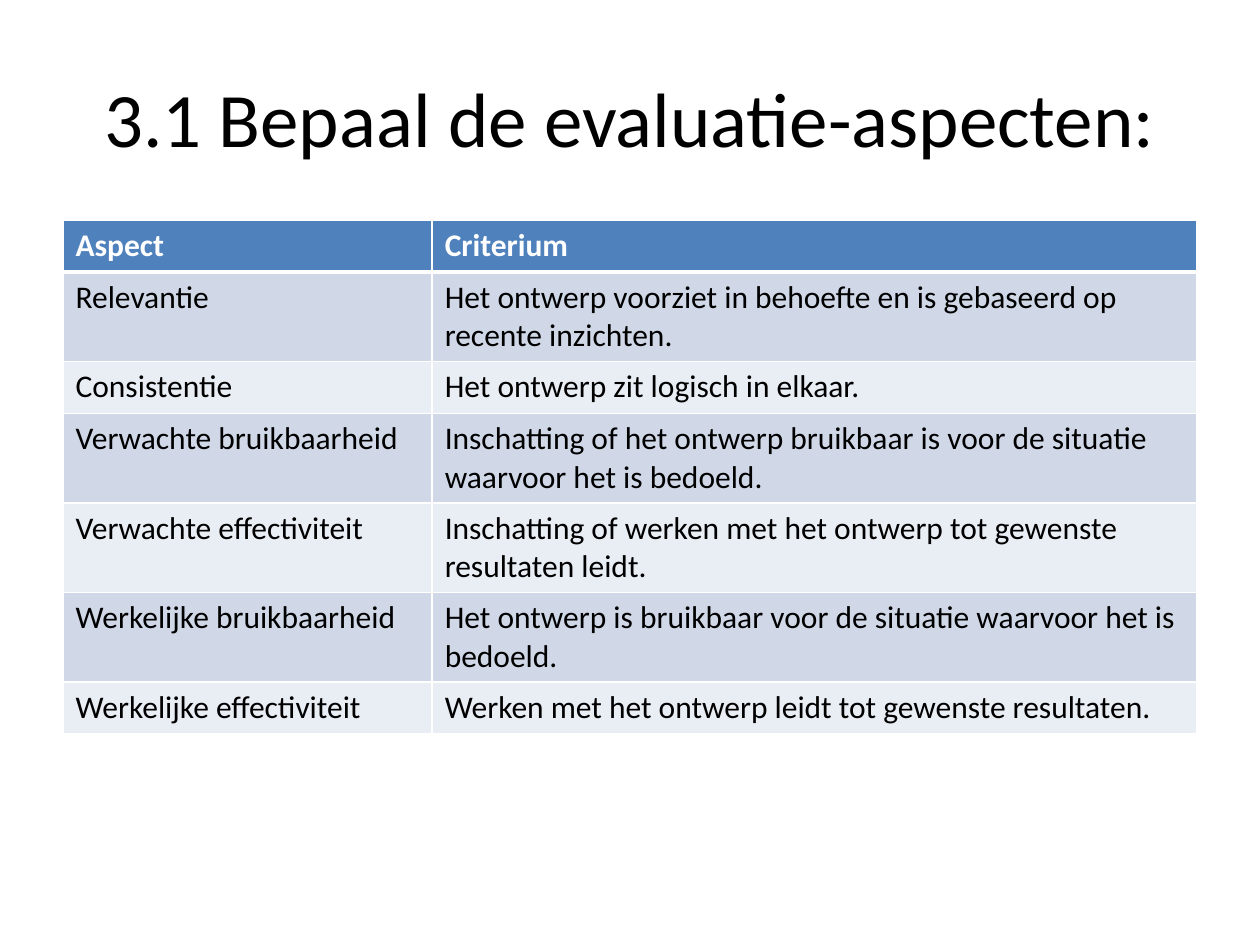
from typing import NamedTuple

from lxml import etree
from pptx import Presentation
from pptx.dml.color import RGBColor
from pptx.enum.text import MSO_ANCHOR, PP_ALIGN
from pptx.oxml.ns import qn
from pptx.util import Inches, Pt

MIDDLE = MSO_ANCHOR.MIDDLE
CENTER = PP_ALIGN.CENTER

COLORS = {
    "text": "000000",
    "white": "FFFFFF",
    "header": "4F81BD",
    "odd": "D0D8E8",
    "even": "E9EDF4",
}
FONT = "Calibri"
TITLE_ONLY = 5
WIDTH, HEIGHT = Inches(10), Inches(7.5)
MARGIN = 0.05
TITLE_TOP, TITLE_HEIGHT = 0.04, 1 / 6
TABLE_TOP = 1.75 / 7.5
COLUMN_SHARES = (0.293, 0.607)
ROW_HEIGHT = Inches(0.41)


class Criterion(NamedTuple):
    aspect: str
    criterium: str


ROWS = [
    Criterion("Aspect", "Criterium"),
    Criterion("Relevantie", "Het ontwerp voorziet in behoefte en is gebaseerd op recente inzichten."),
    Criterion("Consistentie", "Het ontwerp zit logisch in elkaar."),
    Criterion("Verwachte bruikbaarheid", "Inschatting of het ontwerp bruikbaar is voor de situatie waarvoor het is bedoeld."),
    Criterion("Verwachte effectiviteit", "Inschatting of werken met het ontwerp tot gewenste resultaten leidt."),
    Criterion("Werkelijke bruikbaarheid", "Het ontwerp is bruikbaar voor de situatie waarvoor het is bedoeld."),
    Criterion("Werkelijke effectiviteit", "Werken met het ontwerp leidt tot gewenste resultaten."),
]


def style_paragraph(para, size: int, color: str, bold: bool = False) -> None:
    para.font.name = FONT
    para.font.size = Pt(size)
    para.font.bold = bold
    para.font.color.rgb = RGBColor.from_string(COLORS[color])


def set_borders(cell, top: int, bottom: int) -> None:
    properties = cell._tc.get_or_add_tcPr()
    widths = {"a:lnL": 1, "a:lnR": 1, "a:lnT": top, "a:lnB": bottom}
    for position, (tag, width) in enumerate(widths.items()):
        line = etree.Element(qn(tag), w=str(Pt(width)))
        fill = etree.SubElement(line, qn("a:solidFill"))
        etree.SubElement(fill, qn("a:srgbClr"), val=COLORS["white"])
        properties.insert(position, line)


def draw_title(slide, text: str) -> None:
    title = slide.shapes.title
    title.left, title.top = int(WIDTH * MARGIN), int(HEIGHT * TITLE_TOP)
    title.width, title.height = int(WIDTH * (1 - 2 * MARGIN)), int(HEIGHT * TITLE_HEIGHT)
    title.text_frame.text = text
    title.text_frame.vertical_anchor = MIDDLE
    para = title.text_frame.paragraphs[0]
    para.alignment = CENTER
    style_paragraph(para, 44, "text")


def draw_table(slide, rows: list[Criterion]) -> None:
    table = slide.shapes.add_table(
        len(rows), len(COLUMN_SHARES),
        int(WIDTH * MARGIN), int(HEIGHT * TABLE_TOP),
        int(WIDTH * sum(COLUMN_SHARES)), ROW_HEIGHT * len(rows),
    ).table
    for column, share in zip(table.columns, COLUMN_SHARES):
        column.width = int(WIDTH * share)
    for index, entry in enumerate(rows):
        table.rows[index].height = ROW_HEIGHT
        header = index == 0
        fill = "header" if header else ("odd" if index % 2 else "even")
        for column, text in enumerate(entry):
            cell = table.cell(index, column)
            cell.text = text
            cell.fill.solid()
            cell.fill.fore_color.rgb = RGBColor.from_string(COLORS[fill])
            style_paragraph(cell.text_frame.paragraphs[0], 18, "white" if header else "text", header)
            set_borders(cell, top=3 if index == 1 else 1, bottom=3 if header else 1)


def main() -> None:
    deck = Presentation()
    deck.slide_width, deck.slide_height = WIDTH, HEIGHT
    slide = deck.slides.add_slide(deck.slide_layouts[TITLE_ONLY])
    draw_title(slide, "3.1 Bepaal de evaluatie-aspecten:")
    draw_table(slide, ROWS)
    deck.save("out.pptx")


if __name__ == "__main__":
    main()
